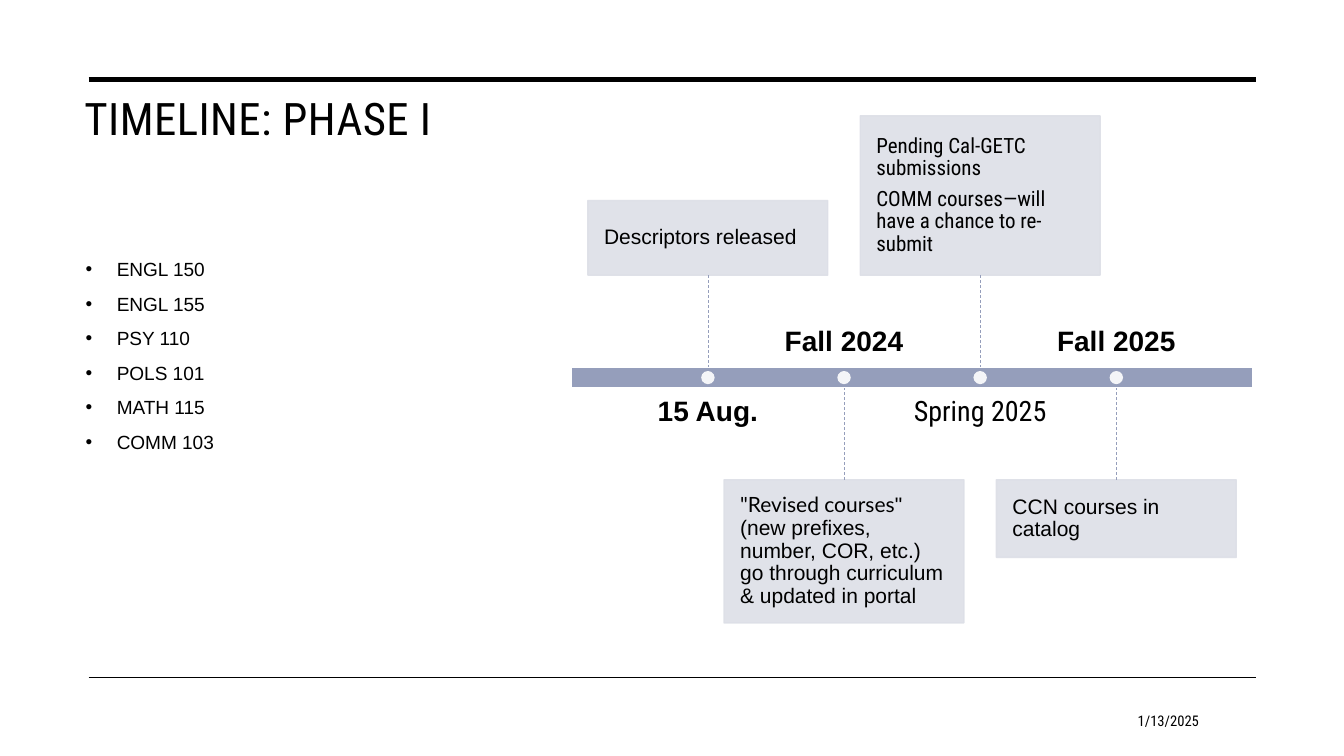
from lxml.etree import SubElement
from pptx import Presentation
from pptx.dml.color import RGBColor
from pptx.enum.dml import MSO_LINE as Dash
from pptx.enum.shapes import MSO_CONNECTOR as Link, MSO_SHAPE as Preset
from pptx.enum.text import MSO_ANCHOR as Anchor, PP_ALIGN as Align
from pptx.oxml.ns import qn
from pptx.util import Inches, Pt

COLORS = {"ink": "000000", "bar": "959EBB", "card": "DDDFE7", "white": "FFFFFF"}
SANS, CONDENSED, LATO = "Arial", "Roboto Condensed", "Lato"
WIDTH, HEIGHT = Inches(13.33), Inches(7.5)
AXIS_LEFT, STEP, STEPS = 42.54, 10.13, 5
AXIS_TOP, AXIS_HEIGHT = 48.53, 2.8
CARD_WIDTH, UPPER_EDGE, LOWER_EDGE = 17.85, 36.4, 63.47
LABEL_WIDTH, LABEL_HEIGHT = 16.2, 8
COURSES = ["ENGL 150", "ENGL 155", "PSY 110", "POLS 101", "MATH 115", "COMM 103"]
MILESTONES = [
    ("15 Aug.", SANS, True, 9.87, [[("Descriptors released", SANS)]]),
    ("Fall 2024", SANS, False, 18.93, [[
        ('"Revised courses', LATO),
        ('" (new prefixes, number, COR, etc.) go through curriculum '
         '& updated in portal', SANS)]]),
    ("Spring 2025", CONDENSED, True, 21.07, [
        [("Pending Cal-GETC submissions", CONDENSED)],
        [("COMM courses—will have a chance to re-submit", CONDENSED)]]),
    ("Fall 2025", SANS, False, 10.27, [[("CCN courses in catalog", SANS)]]),
]


def color(name):
    """Return the named colour."""
    return RGBColor.from_string(COLORS[name])


def area(left, top, width, height):
    """Turn percentages of the slide into lengths."""
    return (round(WIDTH * left / 100), round(HEIGHT * top / 100),
            round(WIDTH * width / 100), round(HEIGHT * height / 100))


def style(run, font, size, bold=False):
    """Format one run in the ink colour."""
    run.font.name, run.font.size, run.font.bold = font, Pt(size), bold
    run.font.color.rgb = color("ink")


def add_text(slide, place, lines, font, size, bold=False, align=Align.LEFT,
             anchor=Anchor.TOP, margin=None):
    """Add a wrapped text box with one paragraph per line."""
    box = slide.shapes.add_textbox(*area(*place))
    frame = box.text_frame
    frame.word_wrap, frame.vertical_anchor = True, anchor
    if margin is not None:
        set_margins(frame, margin)
    frame.text = "\n".join(lines)
    for paragraph in frame.paragraphs:
        paragraph.alignment = align
        for run in paragraph.runs:
            style(run, font, size, bold)
    return frame


def set_margins(frame, inches):
    """Give a text frame equal margins."""
    frame.margin_left = frame.margin_right = Inches(inches)
    frame.margin_top = frame.margin_bottom = Inches(inches)


def add_block(slide, preset, place, fill, line=None, opacity=100):
    """Add a flat shape with an optional outline and opacity."""
    block = slide.shapes.add_shape(preset, *area(*place))
    block.shadow.inherit = False
    block.fill.solid()
    block.fill.fore_color.rgb = color(fill)
    if line:
        block.line.color.rgb, block.line.width = color(line), Pt(1)
    else:
        block.line.fill.background()
    if opacity < 100:
        for tint in list(block._element.spPr.iter(qn("a:srgbClr"))):
            SubElement(tint, qn("a:alpha")).set("val", str(opacity * 1000))
    return block


def add_line(slide, start, end, ink, weight, dash=None):
    """Add a straight line between two points."""
    line = slide.shapes.add_connector(Link.STRAIGHT, *area(*start, *end))
    line.line.color.rgb, line.line.width = color(ink), Pt(weight)
    if dash:
        line.line.dash_style = dash
    SubElement(line._element.spPr, qn("a:effectLst"))
    return line


def add_card(slide, center, top, height, paragraphs):
    """Add a milestone card with its description."""
    card = add_block(slide, Preset.RECTANGLE,
                     (center - CARD_WIDTH / 2, top, CARD_WIDTH, height),
                     "card", "card", 90)
    frame = card.text_frame
    frame.word_wrap, frame.vertical_anchor = True, Anchor.MIDDLE
    set_margins(frame, 0.16)
    for index, pieces in enumerate(paragraphs):
        paragraph = frame.add_paragraph() if index else frame.paragraphs[0]
        paragraph.alignment, paragraph.line_spacing = Align.LEFT, 0.9
        paragraph.space_after = Pt(5.5)
        for words, font in pieces:
            run = paragraph.add_run()
            run.text = words
            style(run, font, 15)
    return card


def add_milestone(slide, center, label, font, above, height, paragraphs):
    """Add a card, its stem, its dot and its date label."""
    card_top = UPPER_EDGE - height if above else LOWER_EDGE
    card = add_card(slide, center, card_top, height, paragraphs)
    axis_edge = AXIS_TOP if above else AXIS_TOP + AXIS_HEIGHT
    card_edge = UPPER_EDGE if above else LOWER_EDGE
    stem = add_line(slide, (center, card_edge), (center, axis_edge),
                    "bar", 0.5, Dash.DASH)
    stem.begin_connect(card, 2 if above else 0)
    add_block(slide, Preset.OVAL, (center - 0.5, 49.07, 1, 1.75), "white",
              opacity=90)
    label_top = 52.53 if above else 39.33
    frame = add_text(slide, (center - LABEL_WIDTH / 2, label_top,
                             LABEL_WIDTH, LABEL_HEIGHT),
                     [label], font, 20, font == SANS, Align.CENTER,
                     Anchor.TOP if above else Anchor.BOTTOM, 0)
    frame.paragraphs[0].line_spacing = 0.9


def add_courses(slide):
    """Add the bulleted list of courses."""
    frame = add_text(slide, (5.63, 33.73, 33.61, 51.87), COURSES, SANS, 13.6)
    for paragraph in frame.paragraphs:
        paragraph.line_spacing, paragraph.space_before = 0.9, Pt(10)
        layout = paragraph._p.get_or_add_pPr()
        layout.set("marL", str(Inches(0.31)))
        layout.set("indent", str(-Inches(0.31)))
        SubElement(layout, qn("a:buFont")).set("typeface", SANS)
        SubElement(layout, qn("a:buChar")).set("char", "•")


def main():
    """Build the timeline slide and save it."""
    deck = Presentation()
    deck.slide_width, deck.slide_height = WIDTH, HEIGHT
    slide = deck.slides.add_slide(deck.slide_layouts[6])
    for level, weight in ((10.53, 3.5), (89.6, 1)):
        add_line(slide, (6.6, level), (93.47, level), "ink", weight)
    title = add_text(slide, (5.55, 11.33, 33.61, 17.87),
                     ["TIMELINE: PHASE I"], CONDENSED, 32)
    title.paragraphs[0].runs[0].font._element.set("spc", "30")
    add_block(slide, Preset.RECTANGLE,
              (AXIS_LEFT, AXIS_TOP, STEP * STEPS, AXIS_HEIGHT), "bar", "white")
    for index, milestone in enumerate(MILESTONES, start=1):
        add_milestone(slide, AXIS_LEFT + STEP * index, *milestone)
    add_courses(slide)
    date = add_text(slide, (68.64, 92.67, 21.31, 5.33), ["1/13/2025"],
                    CONDENSED, 10.5, align=Align.RIGHT, anchor=Anchor.MIDDLE)
    date.paragraphs[0].space_after = Pt(6)
    deck.save("out.pptx")


if __name__ == "__main__":
    main()
